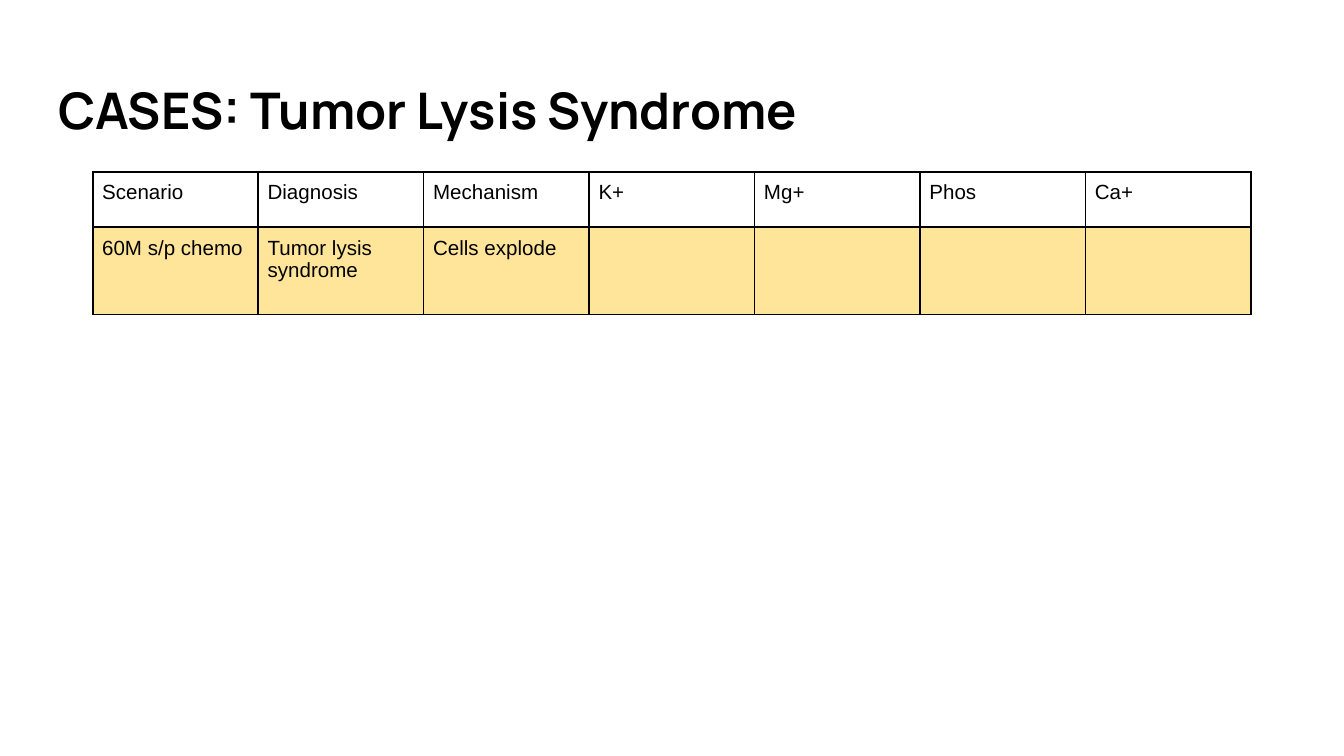
import pptx
import pptx.dml.color
import pptx.enum.text
import pptx.oxml
import pptx.oxml.ns
import pptx.util
from pptx.util import Inches

BLACK = pptx.dml.color.RGBColor(0x00, 0x00, 0x00)
WHITE = pptx.dml.color.RGBColor(0xFF, 0xFF, 0xFF)
YELLOW = pptx.dml.color.RGBColor(0xFF, 0xE5, 0x99)

HEAD = ["Scenario", "Diagnosis", "Mechanism", "K+", "Mg+", "Phos", "Ca+"]
CASE = ["60M s/p chemo", "Tumor lysis syndrome", "Cells explode", "", "", "", ""]


class Deck:
    def __init__(self, slide):
        self.slide = slide
        self.ink = BLACK

    def style(self, para, face, size, bold=False):
        font = para.font
        font.name = face
        font.size = pptx.util.Pt(size)
        font.bold = bold
        font.color.rgb = self.ink

    def title(self, text, left, top, width, height):
        box = self.slide.shapes.add_textbox(
            Inches(left), Inches(top), Inches(width), Inches(height))
        frame = box.text_frame
        frame.word_wrap = True
        frame.vertical_anchor = pptx.enum.text.MSO_ANCHOR.TOP
        frame.margin_left = frame.margin_right = Inches(0.1)
        frame.margin_top = frame.margin_bottom = Inches(0.1)
        frame.text = text
        self.style(frame.paragraphs[0], "Manrope", 27, True)

    def border(self, cell):
        """Draw a 1 pt line on all four sides; call before filling the cell."""
        props = cell._tc.get_or_add_tcPr()
        space = pptx.oxml.ns.nsdecls("a")
        for side in "LRTB":
            props.append(pptx.oxml.parse_xml(
                f'<a:ln{side} {space} w="{pptx.util.Pt(1)}"><a:solidFill>'
                f'<a:srgbClr val="{self.ink}"/></a:solidFill></a:ln{side}>'))

    def cell(self, cell, text, fill):
        self.border(cell)
        cell.fill.solid()
        cell.fill.fore_color.rgb = fill
        cell.margin_left = cell.margin_right = Inches(0.07)
        cell.margin_top = cell.margin_bottom = Inches(0.07)
        cell.text = text
        self.style(cell.text_frame.paragraphs[0], "Arial", 11)

    def table(self, rows, fills, left, top, width, heights):
        table = self.slide.shapes.add_table(
            len(rows), len(rows[0]), Inches(left), Inches(top),
            Inches(width), Inches(sum(heights))).table
        for col in table.columns:
            col.width = Inches(width / len(rows[0]))
        for r, (row, fill, height) in enumerate(zip(rows, fills, heights)):
            table.rows[r].height = Inches(height)
            for c, text in enumerate(row):
                self.cell(table.cell(r, c), text, fill)


def main():
    show = pptx.Presentation()
    show.slide_width = Inches(10)
    show.slide_height = show.slide_width * 9 // 16
    deck = Deck(show.slides.add_slide(show.slide_layouts[6]))
    deck.title("CASES: Tumor Lysis Syndrome", 0.34, 0.49, 6.21, 0.68)
    deck.table([HEAD, CASE], [WHITE, YELLOW], 0.69, 1.28, 8.62, [0.41, 0.65])
    show.save("out.pptx")


if __name__ == "__main__":
    main()
